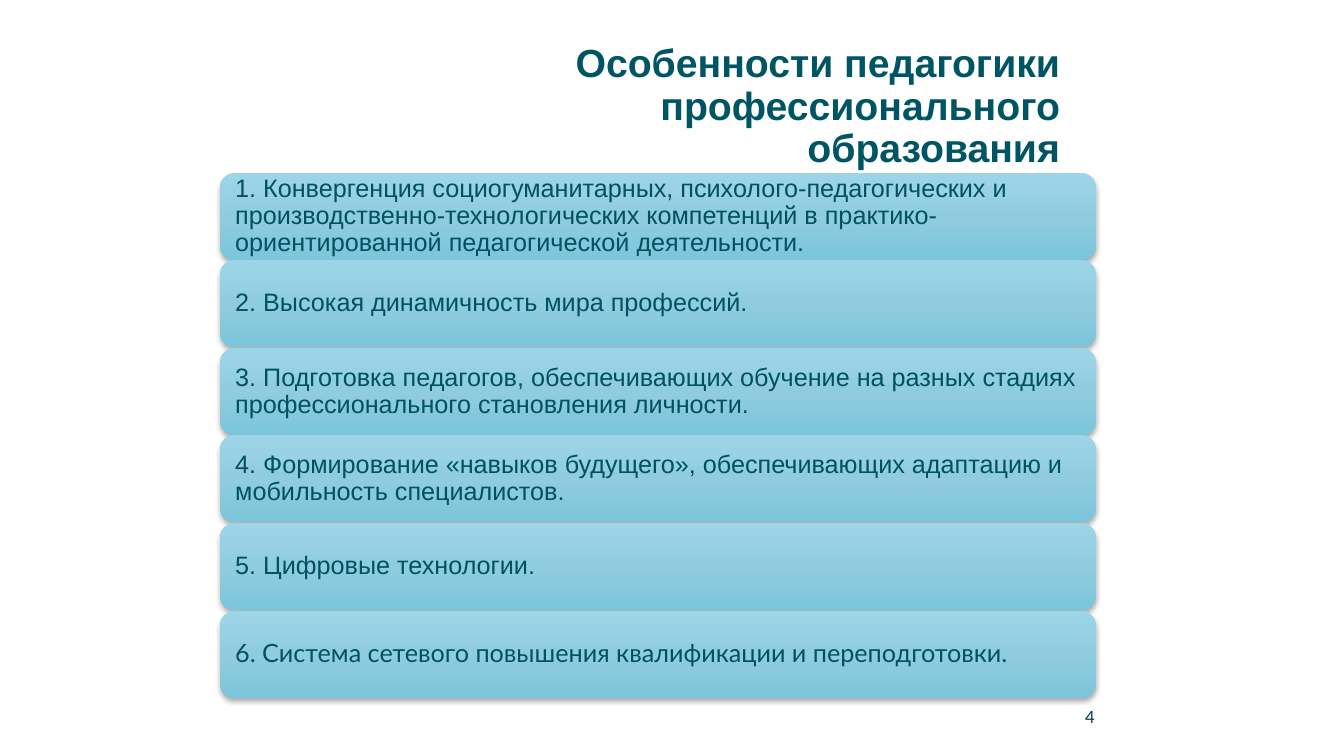
from lxml.etree import SubElement
from pptx import Presentation
from pptx.dml.color import RGBColor
from pptx.enum.shapes import MSO_SHAPE
from pptx.enum.text import MSO_ANCHOR, MSO_AUTO_SIZE, PP_ALIGN
from pptx.oxml.ns import qn
from pptx.util import Pt

# Content
TITLE = "Особенности педагогики профессионального образования"
FEATURES = [
    ("1. Конвергенция социогуманитарных, психолого-педагогических и "
     "производственно-технологических компетенций в практико-ориентированной "
     "педагогической деятельности.", "Arial"),
    ("2. Высокая динамичность мира профессий.", "Arial"),
    ("3. Подготовка педагогов, обеспечивающих обучение на разных стадиях "
     "профессионального становления личности.", "Arial"),
    ("4. Формирование «навыков будущего», обеспечивающих адаптацию и "
     "мобильность специалистов.", "Arial"),
    ("5. Цифровые технологии.", "Arial"),
    ("6. Система сетевого повышения квалификации и переподготовки.", "Lato"),
]
PAGE_NUMBER = "4"

# Layout in px, formats
SLIDE_SIZE = (1344, 756)
TITLE_BOX = (423, 39, 647, 133)
NUMBER_BOX = (1070, 697, 35, 40)
BAR_LEFT, BAR_TOP, BAR_WIDTH, BAR_HEIGHT = 220, 173, 876, 87
LAST_BAR_TOP = 611
BAR_INSETS = (11, 0, 11, 0)
TEXT_INSETS = (10, 5, 10, 5)
GRADIENT = {0: "9DD5E8", 50: "90CCDF", 100: "7CC5DB"}
DOWN = "5400000"


def px(length):
    return round(length * 914400 / 100.8)


def color(value):
    return RGBColor.from_string(value)


def place(shape, box):
    for name, length in zip(("left", "top", "width", "height"), box):
        setattr(shape, name, px(length))


def write(shape, text, font, ink, align, anchor, insets, spacing=0.9):
    frame = shape.text_frame
    frame.word_wrap = True
    frame.auto_size = MSO_AUTO_SIZE.NONE
    frame.vertical_anchor = anchor
    for side, inset in zip(("left", "top", "right", "bottom"), insets):
        setattr(frame, f"margin_{side}", px(inset))
    paragraph = frame.paragraphs[0]
    paragraph.text = text
    paragraph.alignment = align
    paragraph.line_spacing = spacing
    run_font = paragraph.runs[0].font
    for name, value in font.items():
        setattr(run_font, name, value)
    run_font.color.rgb = color(ink)


def add_gradient(shape):
    properties = shape._element.spPr
    gradient = SubElement(properties, qn("a:gradFill"), rotWithShape="1")
    stops = SubElement(gradient, qn("a:gsLst"))
    for position, value in GRADIENT.items():
        stop = SubElement(stops, qn("a:gs"), pos=str(position * 1000))
        SubElement(stop, qn("a:srgbClr"), val=value)
    SubElement(gradient, qn("a:lin"), ang=DOWN, scaled="0")


def add_shadow(shape):
    shape.shadow.inherit = False
    effects = shape._element.spPr.find(qn("a:effectLst"))
    shadow = SubElement(effects, qn("a:outerShdw"), blurRad=str(Pt(3.5)),
                        dist=str(Pt(2.2)), dir=DOWN, rotWithShape="0")
    shade = SubElement(shadow, qn("a:srgbClr"), val="000000")
    SubElement(shade, qn("a:alpha"), val="32000")


presentation = Presentation()
presentation.slide_width, presentation.slide_height = map(px, SLIDE_SIZE)
slide = presentation.slides.add_slide(presentation.slide_layouts[5])

# Title
title = slide.shapes.title
place(title, TITLE_BOX)
write(title, TITLE, {"name": "Arial", "size": Pt(28), "bold": True}, "005564",
      PP_ALIGN.RIGHT, MSO_ANCHOR.TOP, TEXT_INSETS)

# Feature bars, evenly spread from first to last
for index, (text, typeface) in enumerate(FEATURES):
    top = BAR_TOP + (LAST_BAR_TOP - BAR_TOP) * index // (len(FEATURES) - 1)
    bar = slide.shapes.add_shape(
        MSO_SHAPE.ROUNDED_RECTANGLE,
        *map(px, (BAR_LEFT, top, BAR_WIDTH, BAR_HEIGHT)))
    add_gradient(bar)
    bar.line.fill.background()
    add_shadow(bar)
    write(bar, text, {"name": typeface, "size": Pt(18)}, "005260",
          PP_ALIGN.LEFT, MSO_ANCHOR.MIDDLE, BAR_INSETS)

# Page number
number = slide.shapes.add_textbox(*map(px, NUMBER_BOX))
write(number, PAGE_NUMBER, {"name": "Lato", "size": Pt(12)}, "023F47",
      PP_ALIGN.RIGHT, MSO_ANCHOR.MIDDLE, TEXT_INSETS, spacing=1.0)

presentation.save("out.pptx")
